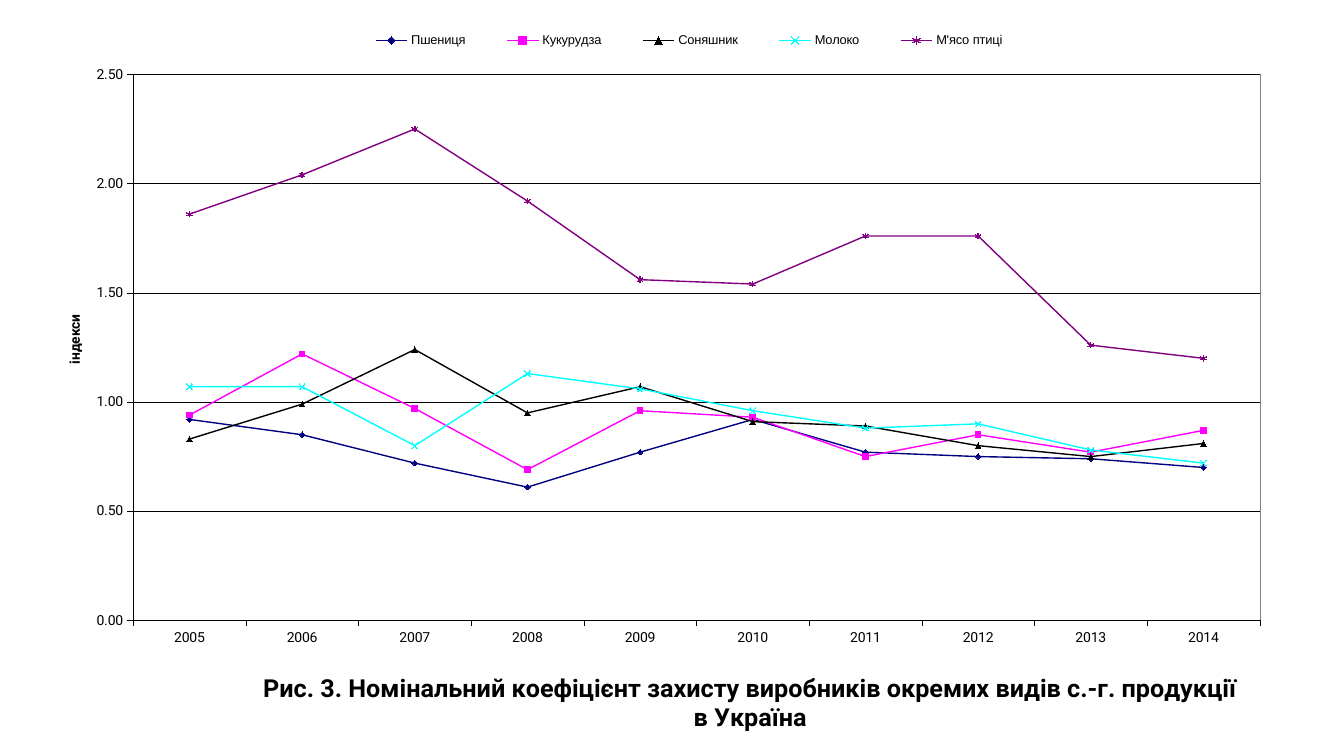
from pptx import Presentation
from pptx.chart.data import CategoryChartData
from pptx.dml.color import RGBColor
from pptx.enum.chart import XL_CHART_TYPE, XL_LEGEND_POSITION, XL_MARKER_STYLE, XL_TICK_MARK
from pptx.oxml import parse_xml
from pptx.oxml.ns import nsdecls, qn
from pptx.util import Inches, Pt

LINE_MARKERS = XL_CHART_TYPE.LINE_MARKERS
LEGEND_TOP = XL_LEGEND_POSITION.TOP
TICK_OUT, TICK_NONE = XL_TICK_MARK.OUTSIDE, XL_TICK_MARK.NONE
DIAMOND, SQUARE, TRIANGLE = XL_MARKER_STYLE.DIAMOND, XL_MARKER_STYLE.SQUARE, XL_MARKER_STYLE.TRIANGLE
CROSS, STAR = XL_MARKER_STYLE.X, XL_MARKER_STYLE.STAR

BLACK = RGBColor(0x00, 0x00, 0x00)
NAVY = RGBColor(0x00, 0x00, 0x80)
MAGENTA = RGBColor(0xFF, 0x00, 0xFF)
CYAN = RGBColor(0x00, 0xFF, 0xFF)
PURPLE = RGBColor(0x80, 0x00, 0x80)
GRAY = RGBColor(0x80, 0x80, 0x80)

CAPTION = "Рис. 3. Номінальний коефіцієнт захисту виробників окремих видів с.-г. продукції в Україна"
YEARS = [str(year) for year in range(2005, 2015)]
PRODUCTS = [
    ("Пшениця", NAVY, DIAMOND, (0.92, 0.85, 0.72, 0.61, 0.77, 0.92, 0.77, 0.75, 0.74, 0.7)),
    ("Кукурудза", MAGENTA, SQUARE, (0.94, 1.22, 0.97, 0.69, 0.96, 0.93, 0.75, 0.85, 0.77, 0.87)),
    ("Соняшник", BLACK, TRIANGLE, (0.83, 0.99, 1.24, 0.95, 1.07, 0.91, 0.89, 0.8, 0.75, 0.81)),
    ("Молоко", CYAN, CROSS, (1.07, 1.07, 0.8, 1.13, 1.06, 0.96, 0.88, 0.9, 0.78, 0.72)),
    ("М'ясо птиці", PURPLE, STAR, (1.86, 2.04, 2.25, 1.92, 1.56, 1.54, 1.76, 1.76, 1.26, 1.2)),
]


def set_values(target, values):
    for name, value in values.items():
        setattr(target, name, value)


def style_font(font, size, name="Roboto", bold=False):
    set_values(font, {"size": Pt(size), "name": name, "bold": bold})
    font.color.rgb = BLACK


def style_line(line, color, width):
    line.color.rgb = color
    line.width = Pt(width)


def place(element, index, **fractions):
    """Give a chart part a manual layout, in fractions of the chart's size."""
    for layout in element.findall(qn("c:layout")):
        element.remove(layout)
    target = '<c:layoutTarget val="inner"/>' if element.tag == qn("c:plotArea") else ""
    modes = "".join(f'<c:{side}Mode val="edge"/>' for side in "xy")
    sizes = "".join(f'<c:{side} val="{value}"/>' for side, value in fractions.items())
    element.insert(index, parse_xml(
        f'<c:layout {nsdecls("c")}><c:manualLayout>{target}{modes}{sizes}'
        '</c:manualLayout></c:layout>'))


def write_title(title, text, size, x, y):
    title.text_frame.text = text
    style_font(title.text_frame.paragraphs[0].runs[0].font, size, bold=True)
    place(title._element, 1, x=x, y=y)


def style_axis(axis):
    set_values(axis, {"major_tick_mark": TICK_OUT, "minor_tick_mark": TICK_NONE})
    style_font(axis.tick_labels.font, 10)
    style_line(axis.format.line, BLACK, 0.25)


def style_value_axis(axis):
    style_axis(axis)
    set_values(axis, {"minimum_scale": 0, "maximum_scale": 2.5, "major_unit": 0.5,
                      "has_major_gridlines": True})
    style_line(axis.major_gridlines.format.line, BLACK, 0.25)
    set_values(axis.tick_labels, {"number_format": "#,##0.00", "number_format_is_linked": False})
    write_title(axis.axis_title, "індекси", 10, x=0.016, y=0.416)


def style_series(series, color, marker_style):
    series.smooth = False
    style_line(series.format.line, color, 1)
    marker = series.marker
    set_values(marker, {"style": marker_style, "size": 4})
    style_line(marker.format.line, color, 0.75)
    if marker_style in (CROSS, STAR):
        marker.format.fill.background()
    else:
        marker.format.fill.solid()
        marker.format.fill.fore_color.rgb = color


def style_legend(chart):
    chart.has_legend = True
    set_values(chart.legend, {"position": LEGEND_TOP, "include_in_layout": False})
    style_font(chart.legend.font, 9.2, "Arial")
    place(chart.legend._element, 1, x=0.24, y=0.018, w=0.57, h=0.035)


def frame_plot(chart):
    plot_area = chart._chartSpace.chart.plotArea
    place(plot_area, 0, x=0.073, y=0.083, w=0.916, h=0.764)
    plot_area.append(parse_xml(
        f'<c:spPr {nsdecls("c", "a")}><a:noFill/><a:ln w="{Pt(0.25)}"><a:solidFill>'
        f'<a:srgbClr val="{GRAY}"/></a:solidFill></a:ln></c:spPr>'))


def add_protection_chart(slide):
    data = CategoryChartData(number_format="0.00")
    data.categories = YEARS
    for name, _, _, values in PRODUCTS:
        data.add_series(name, values)
    chart = slide.shapes.add_chart(LINE_MARKERS, Inches(0.43), Inches(0.15),
                                   Inches(12.2), Inches(7.19), data).chart
    style_font(chart.font, 10)
    chart.plots[0].vary_by_categories = False
    for series, (_, color, marker_style, _) in zip(chart.plots[0].series, PRODUCTS):
        style_series(series, color, marker_style)
    style_axis(chart.category_axis)
    style_value_axis(chart.value_axis)
    style_legend(chart)
    write_title(chart.chart_title, CAPTION, 18, x=0.175, y=0.912)
    frame_plot(chart)


def main():
    presentation = Presentation()
    set_values(presentation, {"slide_width": Inches(13.33), "slide_height": Inches(7.5)})
    blank_layout = presentation.slide_layouts[6]
    add_protection_chart(presentation.slides.add_slide(blank_layout))
    presentation.save("out.pptx")


if __name__ == "__main__":
    main()
